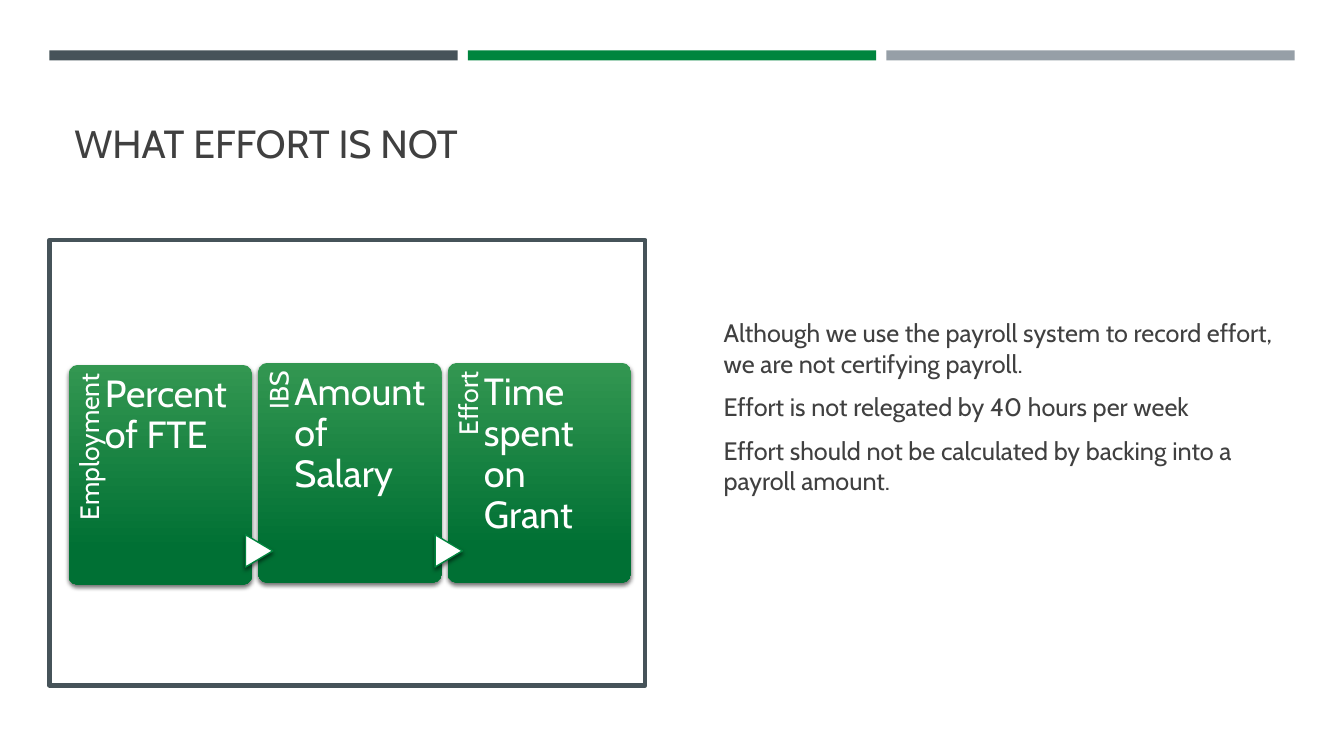
from dataclasses import dataclass

from lxml import etree
from pptx import Presentation
from pptx import util as u
from pptx.dml.color import RGBColor
from pptx.enum import shapes, text
from pptx.oxml import ns

FONT = "Cabin"
HUES = {
    "slate": "465359", "green": "00853E", "gray": "969FA7", "white": "FFFFFF",
    "ink": "404040", "light": "339751", "dark": "007034", "black": "000000",
}
Box = tuple[float, float, float, float]
KIND = shapes.MSO_SHAPE


@dataclass
class Card:
    label: str
    body: str
    top: float
    arrow: bool


def hue(name: str) -> RGBColor:
    return RGBColor.from_string(HUES[name])


def add_text(slide, words: str | list[str], box: Box, *, size: float,
             color: str = "ink", anchor=text.MSO_ANCHOR.TOP,
             align=text.PP_ALIGN.LEFT, inset: Box = (0.1, 0.05, 0.1, 0.05),
             turn: float = 0, line: float = 1, before: float = 0, after: float = 0):
    shape = slide.shapes.add_textbox(*map(u.Inches, box))
    shape.rotation = turn
    frame = shape.text_frame
    frame.word_wrap = True
    frame.vertical_anchor = anchor
    (frame.margin_left, frame.margin_top,
     frame.margin_right, frame.margin_bottom) = map(u.Inches, inset)
    frame.text = words if isinstance(words, str) else "\n".join(words)
    for para in frame.paragraphs:
        para.alignment = align
        para.line_spacing = line
        para.space_before, para.space_after = u.Pt(before), u.Pt(after)
        para.font.size, para.font.name = u.Pt(size), FONT
        para.font.color.rgb = hue(color)
    return shape


def add_block(slide, kind, box: Box, fill: str, edge: str = "", width: float = 1):
    shape = slide.shapes.add_shape(kind, *map(u.Inches, box))
    shape.shadow.inherit = False
    shape.fill.solid()
    shape.fill.fore_color.rgb = hue(fill)
    if edge:
        shape.line.color.rgb = hue(edge)
        shape.line.width = u.Pt(width)
    else:
        shape.line.fill.background()
    return shape


def add_shade(shape) -> None:
    effects = shape.element.spPr.find(ns.qn("a:effectLst"))
    shade = etree.SubElement(effects, ns.qn("a:outerShdw"), blurRad=str(u.Pt(3)),
                             dist=str(u.Pt(2)), dir="5400000", rotWithShape="0")
    tone = etree.SubElement(shade, ns.qn("a:srgbClr"), val=HUES["black"])
    etree.SubElement(tone, ns.qn("a:alpha"), val="55000")


def add_card(slide, card: Card, left: float) -> None:
    top, high = card.top, 2.18
    panel = add_block(slide, KIND.ROUNDED_RECTANGLE, (left, top, 1.82, high), "dark")
    panel.adjustments[0] = 0.05
    panel.fill.gradient()
    panel.fill.gradient_angle = 270
    for stop, (place, name) in zip(panel.fill.gradient_stops,
                                   ((0, "light"), (0.84, "dark"))):
        stop.position, stop.color.rgb = place, hue(name)
    add_shade(panel)
    add_text(slide, card.label, (left - 0.71, top + 0.71, 1.79, 0.36), size=19,
             color="white", align=text.PP_ALIGN.RIGHT, turn=270, line=0.9,
             inset=(0, 0.07, 0.09, 0))
    if card.arrow:
        arrow = add_block(slide, KIND.FLOWCHART_EXTRACT,
                          (left - 0.15, top + 1.73, 0.32, 0.27), "white", "green")
        arrow.rotation = 90
        add_shade(arrow)
    add_text(slide, card.body, (left + 0.36, top, 1.35, high), size=27,
             color="white", line=0.9, inset=(0, 0.1, 0, 0))


def main() -> None:
    deck = Presentation()
    deck.slide_width, deck.slide_height = u.Inches(13.33), u.Inches(7.5)
    slide = deck.slides.add_slide(deck.slide_layouts[6])

    # Title and top bars
    add_text(slide, "WHAT EFFORT IS NOT", (0.64, 0.77, 12.06, 0.93), size=28,
             anchor=text.MSO_ANCHOR.BOTTOM)
    for i, name in enumerate(("slate", "green", "gray")):
        add_block(slide, KIND.RECTANGLE, (0.49 + 4.15 * i, 0.5, 4.05, 0.1), name)

    # Framed cards
    add_block(slide, KIND.RECTANGLE, (0.49, 2.38, 5.91, 4.42), "white", "slate", 3)
    cards = (
        Card("Employment", "Percent of FTE", 3.62, False),
        Card("IBS", "Amount of Salary", 3.6, True),
        Card("Effort", "Time spent on Grant", 3.6, True),
    )
    for i, card in enumerate(cards):
        add_card(slide, card, 0.68 + 1.88 * i)

    # Remarks, held above the middle by the bottom inset
    add_text(slide, [
        "Although we use the payroll system to record effort, "
        "we are not certifying payroll.",
        "Effort is not relegated by 40 hours per week",
        "Effort should not be calculated by backing into a payroll amount.",
    ], (7.08, 2.48, 5.77, 4.42), size=18, anchor=text.MSO_ANCHOR.MIDDLE,
        inset=(0.1, 0.05, 0.1, 1.36), before=3.6, after=6)

    deck.save("out.pptx")


if __name__ == "__main__":
    main()
